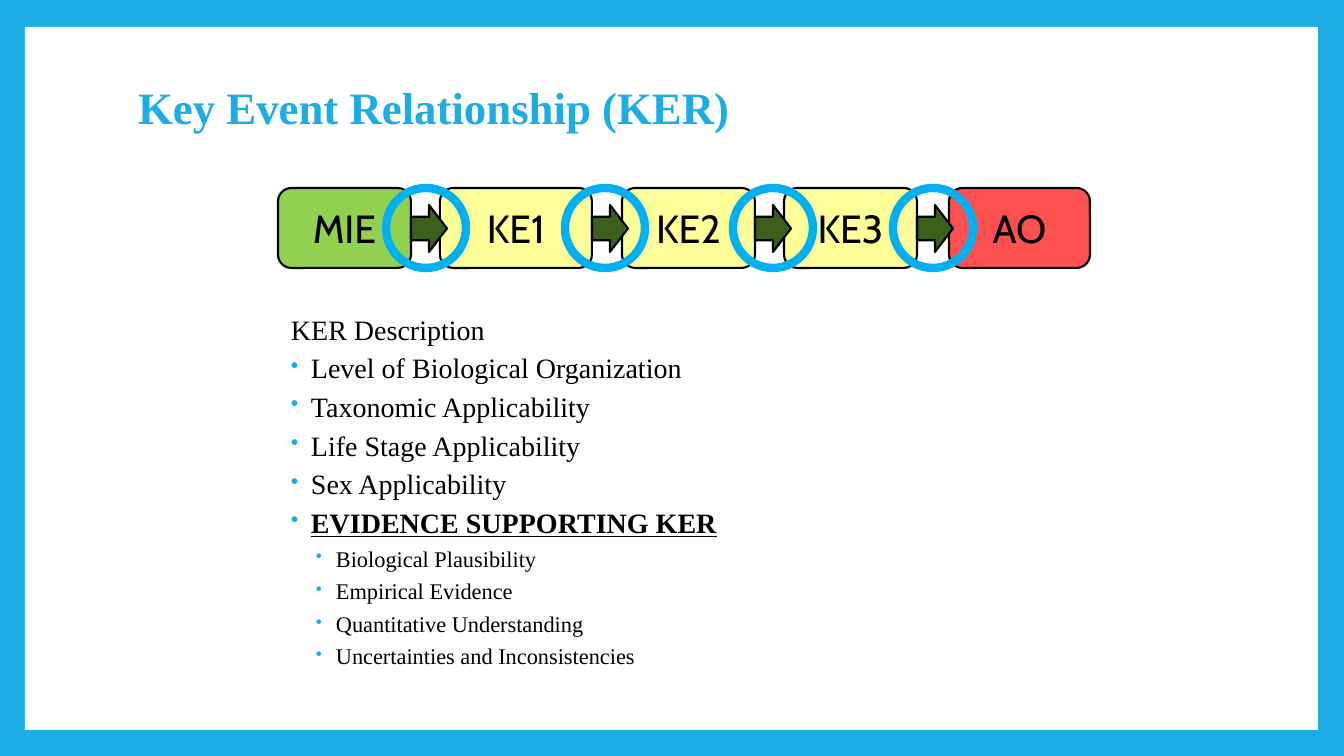
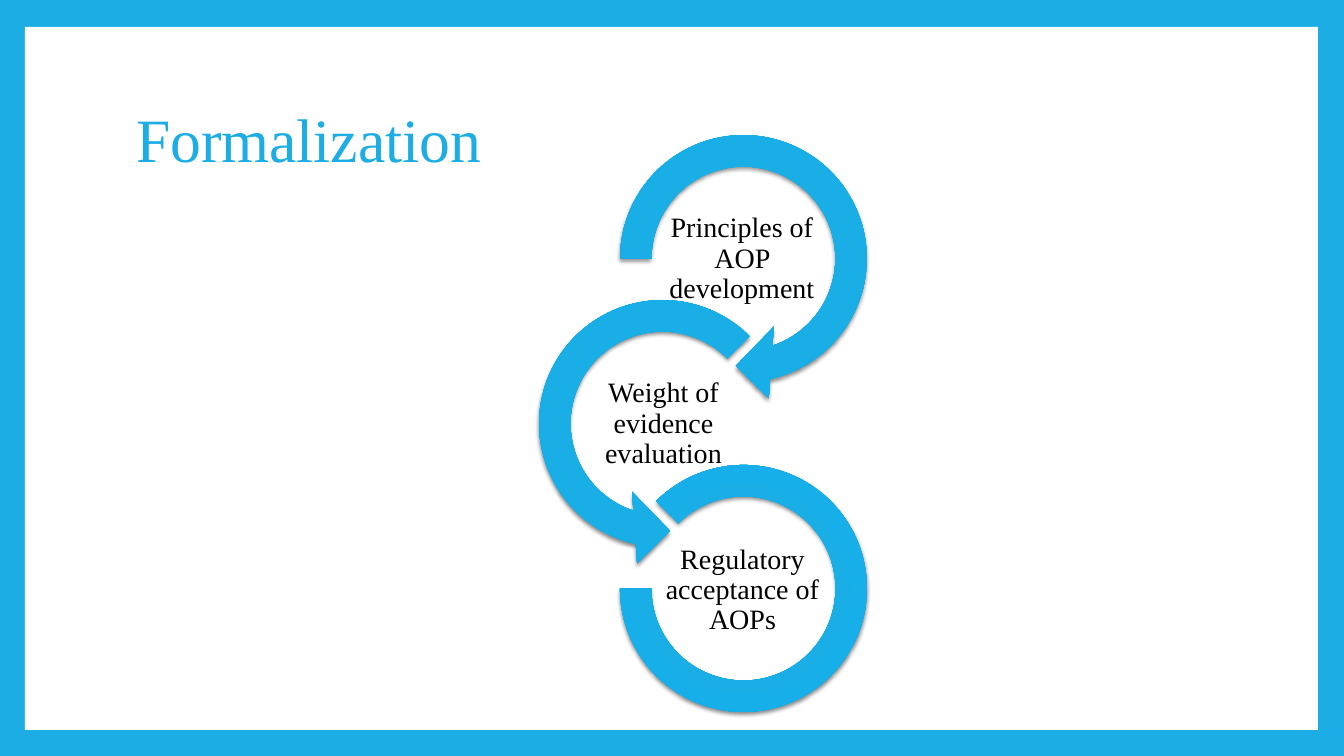
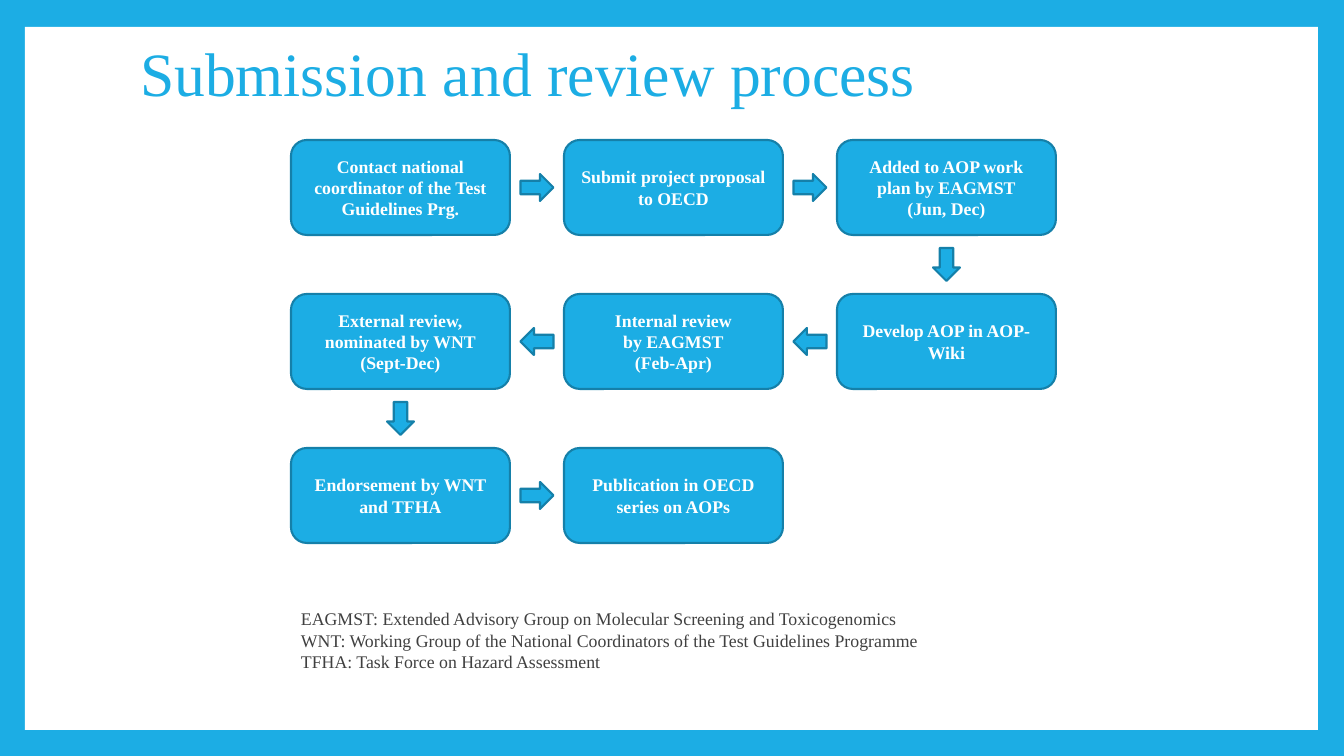
import pptx
import pptx.dml.color
import pptx.enum.shapes
import pptx.enum.text
import pptx.oxml
import pptx.oxml.ns
import pptx.util
from lxml import etree

RGBColor = pptx.dml.color.RGBColor
SHAPE = pptx.enum.shapes.MSO_SHAPE
ALIGN = pptx.enum.text.PP_ALIGN
ANCHOR = pptx.enum.text.MSO_ANCHOR
qn = pptx.oxml.ns.qn

# Shared style
BLUE = RGBColor(0x1C, 0xAD, 0xE4)
DARK_BLUE = RGBColor(0x15, 0x80, 0xA9)
RING_BLUE = RGBColor(0x00, 0xB0, 0xF0)
GREEN = RGBColor(0x92, 0xD0, 0x50)
DARK_GREEN = RGBColor(0x3A, 0x60, 0x1B)
YELLOW = RGBColor(0xFF, 0xFF, 0x99)
RED = RGBColor(0xFF, 0x50, 0x50)
BLACK = RGBColor(0x00, 0x00, 0x00)
GREY = RGBColor(0x40, 0x40, 0x40)
WHITE = RGBColor(0xFF, 0xFF, 0xFF)
SERIF = "Times New Roman"
SLIDE_WIDTH, SLIDE_HEIGHT = 1344, 756
EMU_PER_PX = 12192000 / SLIDE_WIDTH

NS = 'xmlns:a="http://schemas.openxmlformats.org/drawingml/2006/main"'
ARC_FILL = f"""<a:gradFill {NS} rotWithShape="1"><a:gsLst>
<a:gs pos="0"><a:srgbClr val="1CADE4"/></a:gs>
<a:gs pos="90000"><a:srgbClr val="17AFE9"/></a:gs>
<a:gs pos="100000"><a:srgbClr val="07A5E1"/></a:gs></a:gsLst>
<a:path path="circle"><a:fillToRect l="100000" t="100000" r="100000" b="100000"/></a:path>
</a:gradFill>"""
ARC_SHADOW = f"""<a:outerShdw {NS} blurRad="38100" dist="25400" dir="5400000"
rotWithShape="0"><a:srgbClr val="000000"><a:alpha val="45000"/></a:srgbClr></a:outerShdw>"""


def px(length):
    return pptx.util.Emu(round(length * EMU_PER_PX))


def write(frame, text, size=20, color=BLACK, font=SERIF, bold=False, underline=False,
          align=ALIGN.LEFT, spacing=1.0, after=0, indent=0, bullet=False):
    """Append one paragraph to the frame for each line of text."""
    for line in text.split("\n"):
        paragraph = frame.paragraphs[0]
        if paragraph.runs:
            paragraph = frame.add_paragraph()
        properties = paragraph._p.get_or_add_pPr()
        if indent:
            properties.set("marL", str(px(indent)))
            properties.set("indent", str(px(-20 if bullet else 0)))
        if bullet:
            bullet_color = etree.SubElement(properties, qn("a:buClr"))
            etree.SubElement(bullet_color, qn("a:srgbClr"), val=str(BLUE))
            etree.SubElement(properties, qn("a:buSzPct"), val="80000")
            etree.SubElement(properties, qn("a:buChar"), char="•")
        paragraph.alignment = align
        paragraph.line_spacing = spacing
        paragraph.space_after = pptx.util.Pt(after)
        run = paragraph.add_run()
        run.text = line
        run.font.name = font
        run.font.size = pptx.util.Pt(size)
        run.font.color.rgb = color
        run.font.bold = bold
        run.font.underline = underline


class Deck:
    def __init__(self):
        self.prs = pptx.Presentation()
        self.prs.slide_width = px(SLIDE_WIDTH)
        self.prs.slide_height = px(SLIDE_HEIGHT)
        self.slide = None
        backdrop = self.prs.slide_master.background.fill
        backdrop.solid()
        backdrop.fore_color.rgb = BLUE

    def new_slide(self, title, left, top, size=44, bold=False):
        first = self.slide is None
        self.slide = self.prs.slides.add_slide(self.prs.slide_layouts[5])
        if first:
            # The white panel inside the blue frame belongs to the master
            panel = self.shape(SHAPE.RECTANGLE, 25, 27, 1293, 703, fill=WHITE)
            self.prs.slide_master.shapes.element.insert(2, panel.element)
        heading = self.slide.shapes.title
        heading.left, heading.top, heading.width, heading.height = map(px, (left, top, 1089, 149))
        frame = heading.text_frame
        frame.auto_size = pptx.enum.text.MSO_AUTO_SIZE.NONE
        frame.vertical_anchor = ANCHOR.MIDDLE
        write(frame, title, size=size, color=BLUE, bold=bold, spacing=0.9)

    def shape(self, preset, left, top, width, height, fill=None, line=None, weight=1.5):
        shape = self.slide.shapes.add_shape(preset, px(left), px(top), px(width), px(height))
        shape.shadow.inherit = False
        if fill is None:
            shape.fill.background()
        else:
            shape.fill.solid()
            shape.fill.fore_color.rgb = fill
        if line is None:
            shape.line.fill.background()
        else:
            shape.line.color.rgb = line
            shape.line.width = pptx.util.Pt(weight)
        return shape

    def box(self, text, left, top, width, height, fill, line, **style):
        frame = self.shape(SHAPE.ROUNDED_RECTANGLE, left, top, width, height, fill, line).text_frame
        frame.word_wrap = True
        frame.vertical_anchor = ANCHOR.MIDDLE
        write(frame, text, align=ALIGN.CENTER, **style)

    def text_box(self, left, top, width, height, anchor=ANCHOR.TOP, inset=None):
        box = self.slide.shapes.add_textbox(px(left), px(top), px(width), px(height))
        frame = box.text_frame
        frame.word_wrap = True
        frame.vertical_anchor = anchor
        if inset is not None:
            frame.margin_left = frame.margin_right = px(inset)
            frame.margin_top = frame.margin_bottom = px(inset)
        return frame

    def arc(self, preset, left, top, size, adjustments):
        arc = self.shape(preset, left, top, size, size, fill=BLUE)
        for index, value in enumerate(adjustments):
            arc.adjustments[index] = value
        properties = arc.element.spPr
        solid = properties.find(qn("a:solidFill"))
        properties.replace(solid, pptx.oxml.parse_xml(ARC_FILL))
        properties.find(qn("a:effectLst")).append(pptx.oxml.parse_xml(ARC_SHADOW))


def relationship_slide(deck):
    deck.new_slide("Key Event Relationship (KER)", 128, 35, size=32, bold=True)

    # Chain of events
    events = [("MIE", GREEN, 278, 133), ("KE1", YELLOW, 440, 152), ("KE2", YELLOW, 622, 133),
              ("KE3", YELLOW, 784, 133), ("AO", RED, 949, 141)]
    for name, color, left, width in events:
        deck.box(name, left, 188, width, 80, color, BLACK, size=28, font="Cabin")
    for _, _, left, width in events[:-1]:
        deck.shape(SHAPE.RIGHT_ARROW, left + width, 205, 36, 47, DARK_GREEN, BLACK)
    for ring_left in (386, 565, 733, 893):
        deck.shape(SHAPE.OVAL, ring_left, 188, 80, 80, line=RING_BLUE, weight=6)

    # Contents of a description
    description = deck.text_box(276, 311, 792, 389)
    spaced = {"spacing": 0.9, "after": 6}
    write(description, "KER Description", indent=5, **spaced)
    write(description, "Level of Biological Organization\nTaxonomic Applicability\n"
          "Life Stage Applicability\nSex Applicability", indent=25, bullet=True, **spaced)
    write(description, "EVIDENCE SUPPORTING KER", bold=True, underline=True,
          indent=25, bullet=True, **spaced)
    write(description, "Biological Plausibility\nEmpirical Evidence\n"
          "Quantitative Understanding\nUncertainties and Inconsistencies",
          size=16, indent=50, bullet=True, **spaced)


def formalization_slide(deck):
    deck.new_slide("Formalization", 126, 68)

    # Each stage: its arc, then the label inside it
    stages = [
        ("Principles of AOP development", (652, 202, 180, 114),
         (SHAPE.CIRCULAR_ARROW, 600, 115, 287, (0.1098, 11.42322, 45, 108, 0.125))),
        ("Weight of evidence evaluation", (584, 361, 159, 126),
         (SHAPE.LEFT_CIRCULAR_ARROW, 519, 280, 287, (0.1098, 11.42322, 63, 189, 0.125))),
        ("Regulatory acceptance of AOPs", (663, 533, 159, 115),
         (SHAPE.BLOCK_ARC, 620, 465, 247, (135, 108, 0.1274))),
    ]
    for label, label_place, arc in stages:
        deck.arc(*arc)
        frame = deck.text_box(*label_place, anchor=ANCHOR.MIDDLE, inset=1)
        write(frame, label, align=ALIGN.CENTER, spacing=0.9)


def review_slide(deck):
    deck.new_slide("Submission and review process", 130, 2)

    # Steps on a grid, as column, row and text
    steps = [
        (0, 0, "Contact national coordinator of the Test Guidelines Prg."),
        (1, 0, "Submit project proposal to OECD"),
        (2, 0, "Added to AOP work plan by EAGMST\n(Jun, Dec)"),
        (2, 1, "Develop AOP in AOP-Wiki"),
        (1, 1, "Internal review\nby EAGMST\n(Feb-Apr)"),
        (0, 1, "External review, nominated by WNT\n(Sept-Dec)"),
        (0, 2, "Endorsement by WNT and TFHA"),
        (1, 2, "Publication in OECD series on AOPs"),
    ]
    left, top, width, height = 291, 140, 219, 95
    column_pitch, row_pitch = 273, 154
    for column, row, text in steps:
        deck.box(text, left + column * column_pitch, top + row * row_pitch, width, height,
                 BLUE, DARK_BLUE, size=12.7, color=WHITE, bold=True)

    # An arrow midway between each step and the next
    arrow_width, arrow_height = 33, 27
    rotations = {(1, 0): 0, (0, 1): 90, (-1, 0): 180}
    for (column, row, _), (next_column, next_row, _) in zip(steps, steps[1:]):
        middle_x = left + (width + (column + next_column) * column_pitch) / 2
        middle_y = top + (height + (row + next_row) * row_pitch) / 2
        arrow = deck.shape(SHAPE.RIGHT_ARROW, middle_x - arrow_width / 2,
                           middle_y - arrow_height / 2, arrow_width, arrow_height,
                           BLUE, DARK_BLUE)
        arrow.rotation = rotations[next_column - column, next_row - row]

    # Abbreviations
    write(deck.text_box(291, 603, 642, 75),
          "EAGMST: Extended Advisory Group on Molecular Screening and Toxicogenomics\n"
          "WNT: Working Group of the National Coordinators of the Test Guidelines Programme\n"
          "TFHA: Task Force on Hazard Assessment", size=12.7, color=GREY)


def main():
    deck = Deck()
    relationship_slide(deck)
    formalization_slide(deck)
    review_slide(deck)
    deck.prs.save("out.pptx")


if __name__ == "__main__":
    main()
